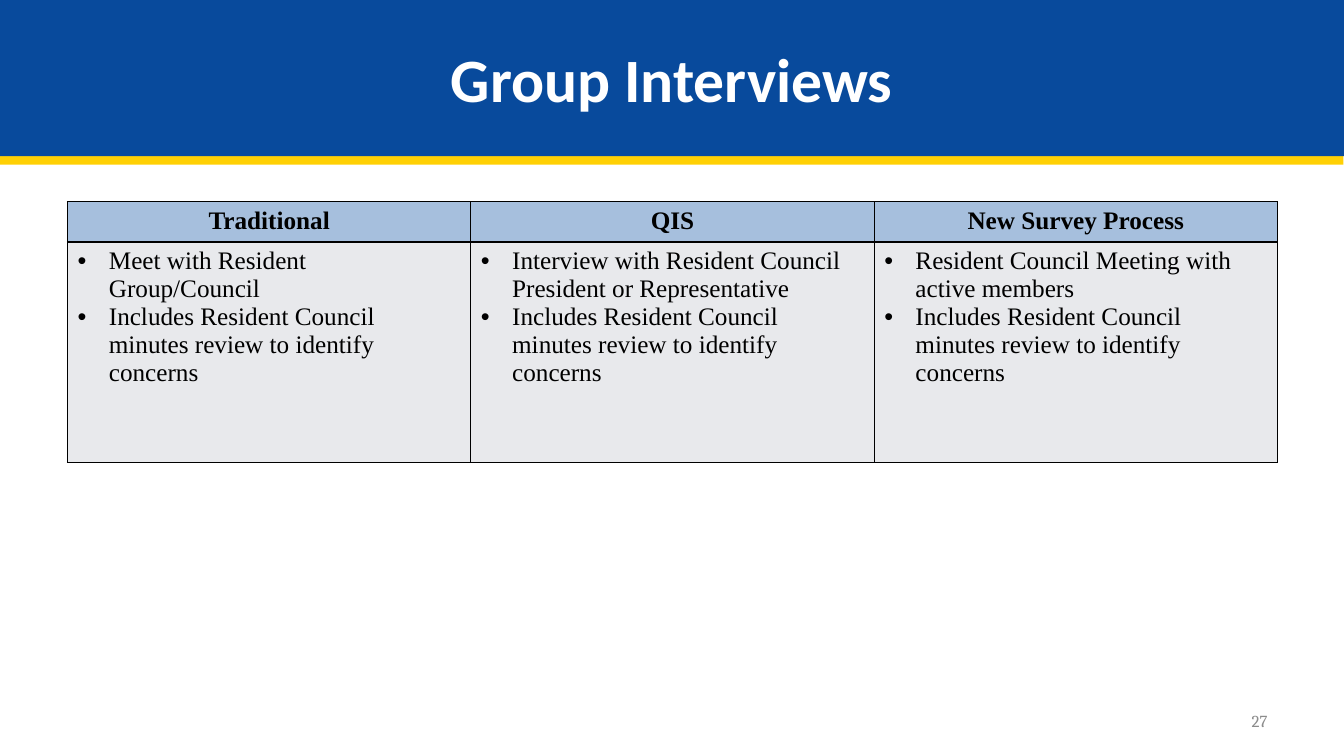
from dataclasses import dataclass

from lxml.etree import SubElement
from pptx import Presentation
from pptx.dml.color import RGBColor
from pptx.enum.text import MSO_ANCHOR, MSO_AUTO_SIZE, PP_ALIGN
from pptx.oxml.ns import qn
from pptx.util import Inches, Pt

COLORS = {
    "blue": "084A9C",
    "yellow": "FFD004",
    "header": "A6BFDD",
    "body": "E8E9EC",
    "black": "000000",
    "white": "FFFFFF",
    "gray": "8C8C8C",
}
TABLE_FONT = "Times New Roman"
MINUTES_REVIEW = "Includes Resident Council minutes review to identify concerns"


@dataclass
class Process:
    name: str
    meeting: str


PROCESSES = [
    Process("Traditional", "Meet with Resident Group/Council"),
    Process("QIS", "Interview with Resident Council President or Representative"),
    Process("New Survey Process", "Resident Council Meeting with active members"),
]


def rgb(name: str) -> RGBColor:
    return RGBColor.from_string(COLORS[name])


def add_color(parent, name: str) -> None:
    SubElement(parent, qn("a:srgbClr"), val=COLORS[name])


def add_bullet(p, indent: float = 0.31) -> None:
    pPr = p._p.get_or_add_pPr()
    pPr.set("marL", str(Inches(indent)))
    pPr.set("indent", str(-Inches(indent)))
    add_color(SubElement(pPr, qn("a:buClr")), "black")
    SubElement(pPr, qn("a:buFont"), typeface="Arial")
    SubElement(pPr, qn("a:buChar"), char="•")


def write(tf, lines: list[str], *, size: float, font: str, color: str,
          bold: bool = False, align=PP_ALIGN.LEFT, bullets: bool = False) -> None:
    for i, line in enumerate(lines):
        p = tf.add_paragraph() if i else tf.paragraphs[0]
        p.alignment = align
        if bullets:
            add_bullet(p)
        r = p.add_run()
        r.text = line
        r.font.size = Pt(size)
        r.font.name = font
        r.font.bold = bold
        r.font.color.rgb = rgb(color)


def place(sp, left: float, top: float, width: float, height: float) -> None:
    sp.left, sp.top = Inches(left), Inches(top)
    sp.width, sp.height = Inches(width), Inches(height)


def add_title(s, text: str) -> None:
    """Fill the title banner; its hard shadow forms the yellow stripe."""
    sp = s.shapes.title
    place(sp, 0, 0, 13.33, 1.55)
    sp.fill.solid()
    sp.fill.fore_color.rgb = rgb("blue")
    effects = SubElement(sp._element.spPr, qn("a:effectLst"))
    shadow = SubElement(effects, qn("a:outerShdw"), blurRad="0", dist=str(Pt(6)),
                        dir=str(94 * 60000), algn="t", rotWithShape="0")
    add_color(shadow, "yellow")
    tf = sp.text_frame
    tf.auto_size = MSO_AUTO_SIZE.NONE
    tf.vertical_anchor = MSO_ANCHOR.MIDDLE
    write(tf, [text], size=44, font="Calibri", color="white", bold=True,
          align=PP_ALIGN.CENTER)


def format_cell(cell, fill: str) -> None:
    tcPr = cell._tc.get_or_add_tcPr()
    for side in ("lnL", "lnR", "lnT", "lnB"):
        ln = SubElement(tcPr, qn(f"a:{side}"), w=str(Pt(1)))
        add_color(SubElement(ln, qn("a:solidFill")), "black")
    cell.fill.solid()
    cell.fill.fore_color.rgb = rgb(fill)


def add_process_table(s, processes: list[Process]) -> None:
    frame = s.shapes.add_table(2, len(processes), Inches(0.67), Inches(2),
                               Inches(12), Inches(2.59))
    table = frame.table
    table.rows[0].height, table.rows[1].height = Inches(0.4), Inches(2.19)
    for col, process in enumerate(processes):
        table.columns[col].width = Inches(4)
        head, body = table.cell(0, col), table.cell(1, col)
        format_cell(head, "header")
        format_cell(body, "body")
        write(head.text_frame, [process.name], size=18, font=TABLE_FONT,
              color="black", bold=True, align=PP_ALIGN.CENTER)
        write(body.text_frame, [process.meeting, MINUTES_REVIEW], size=18,
              font=TABLE_FONT, color="black", bullets=True)


def add_page_number(s, number: str) -> None:
    sp = s.shapes.add_textbox(Inches(9.56), Inches(6.95), Inches(3.11), Inches(0.4))
    tf = sp.text_frame
    tf.word_wrap = True
    tf.vertical_anchor = MSO_ANCHOR.MIDDLE
    write(tf, [number], size=12, font="Cambria", color="gray", align=PP_ALIGN.RIGHT)


def main() -> None:
    prs = Presentation()
    prs.slide_width, prs.slide_height = Inches(13.33), Inches(7.5)
    s = prs.slides.add_slide(prs.slide_layouts[5])
    add_title(s, "Group Interviews")
    add_process_table(s, PROCESSES)
    add_page_number(s, "27")
    prs.save("out.pptx")


if __name__ == "__main__":
    main()
